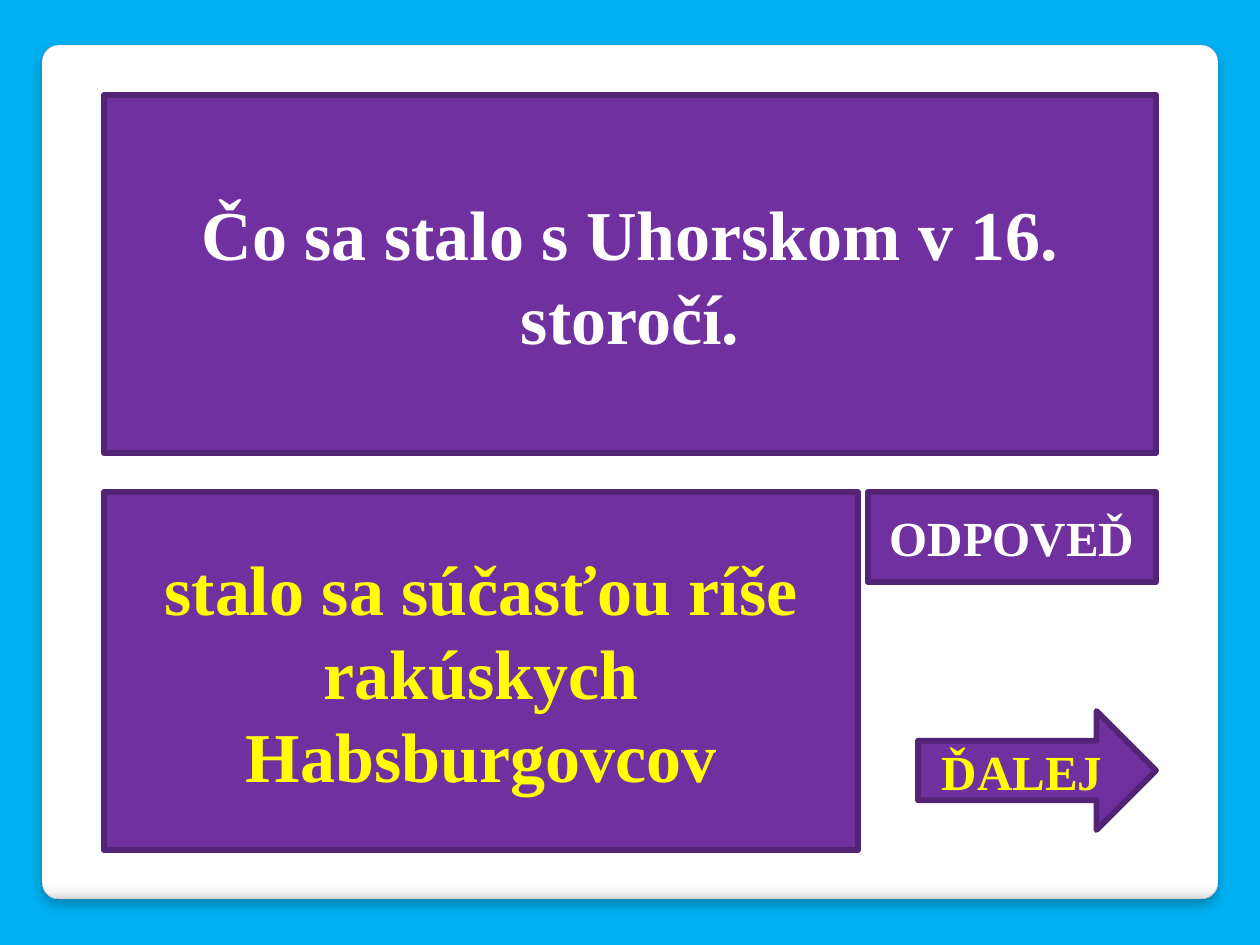
from lxml import etree
from pptx import Presentation
from pptx.dml.color import RGBColor
from pptx.enum.shapes import MSO_SHAPE
from pptx.enum.text import MSO_ANCHOR, PP_ALIGN
from pptx.oxml import parse_xml
from pptx.oxml.ns import qn
from pptx.util import Pt

RECTANGLE = MSO_SHAPE.RECTANGLE
ARROW = MSO_SHAPE.RIGHT_ARROW
ROUNDED = MSO_SHAPE.ROUNDED_RECTANGLE
MIDDLE = MSO_ANCHOR.MIDDLE
CENTER = PP_ALIGN.CENTER

EMU_PER_PX = 914400 / 126
FONT = "Times New Roman"
PURPLE, DARK_PURPLE = "7030A0", "532476"
WHITE, YELLOW = "FFFFFF", "FFFF00"
DRAWING_NS = "http://schemas.openxmlformats.org/drawingml/2006/main"


def px(value):
    return round(value * EMU_PER_PX)


def color(hex_string):
    return RGBColor.from_string(hex_string)


presentation = Presentation()
presentation.slide_width = px(1260)
presentation.slide_height = px(945)
slide = presentation.slides.add_slide(presentation.slide_layouts[6])

# Background
slide.background.fill.solid()
slide.background.fill.fore_color.rgb = color("00B0F0")

# White panel with a grey lower edge
panel = slide.shapes.add_shape(ROUNDED, px(42), px(45), px(1176), px(854))
panel.adjustments[0] = 0.02
panel.line.color.rgb = color("A4A4A4")
panel.line.width = Pt(0.16)
panel.fill.gradient()
panel.fill.gradient_angle = 270
stops = panel.element.spPr.find(qn("a:gradFill")).find(qn("a:gsLst"))
for stop in list(stops):
    stops.remove(stop)
for percent, hex_string in [(0, WHITE), (98, WHITE), (99, "F7F7F7"), (100, "DADADA")]:
    stop = etree.SubElement(stops, qn("a:gs"), pos=str(percent * 1000))
    etree.SubElement(stop, qn("a:srgbClr"), val=hex_string)

# Soft shadow below the panel
panel.element.spPr.append(parse_xml(
    f'<a:effectLst xmlns:a="{DRAWING_NS}">'
    f'<a:outerShdw blurRad="{Pt(6)}" dist="{Pt(4)}" dir="5400000" algn="t" rotWithShape="0">'
    '<a:srgbClr val="000000"><a:alpha val="25000"/></a:srgbClr>'
    '</a:outerShdw></a:effectLst>'))

# Question, answer and the two buttons
boxes = [
    (RECTANGLE, 104, 95, 1052, 358, "Čo sa stalo s Uhorskom v 16. storočí.", 40, WHITE),
    (RECTANGLE, 104, 492, 754, 358, "stalo sa súčasťou ríše rakúskych Habsburgovcov", 40, YELLOW),
    (RECTANGLE, 868, 492, 288, 90, "ODPOVEĎ", 28, WHITE),
    (ARROW, 918, 711, 238, 119, "ĎALEJ", 28, YELLOW),
]
for kind, left, top, width, height, text, size, text_color in boxes:
    shape = slide.shapes.add_shape(kind, px(left), px(top), px(width), px(height))
    shape.shadow.inherit = False
    shape.fill.solid()
    shape.fill.fore_color.rgb = color(PURPLE)
    shape.line.color.rgb = color(DARK_PURPLE)
    shape.line.width = Pt(3.35)
    shape.text_frame.word_wrap = True
    shape.text_frame.vertical_anchor = MIDDLE
    paragraph = shape.text_frame.paragraphs[0]
    paragraph.alignment = CENTER
    run = paragraph.add_run()
    run.text = text
    run.font.name = FONT
    run.font.size = Pt(size)
    run.font.bold = True
    run.font.color.rgb = color(text_color)

presentation.save("out.pptx")
